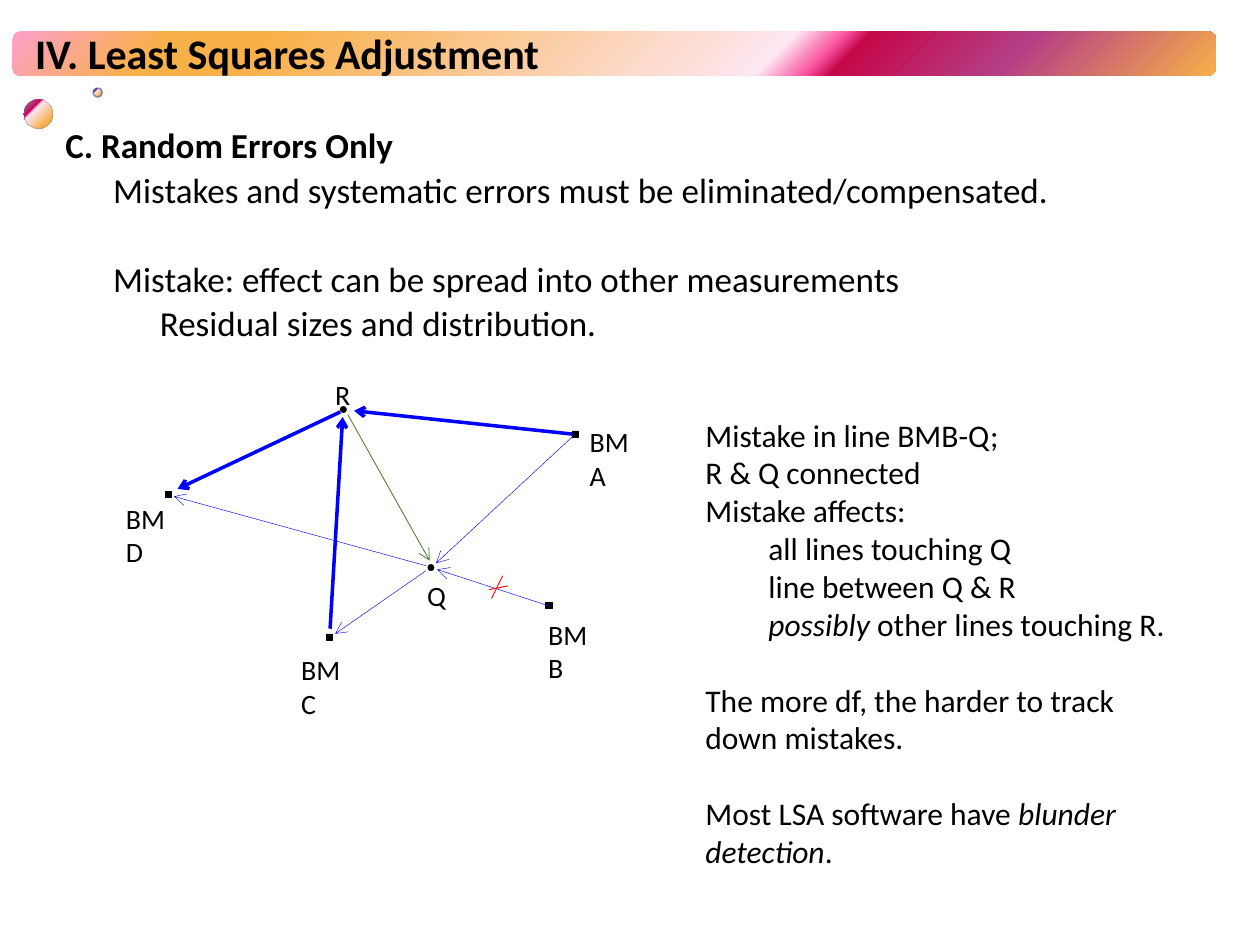
"""Build the least squares slide on random errors with its levelling network."""
from dataclasses import dataclass
from typing import Optional

from lxml.etree import SubElement
from pptx import Presentation
from pptx.dml.color import RGBColor
from pptx.enum.shapes import MSO_CONNECTOR as Conn, MSO_SHAPE as Shp
from pptx.oxml import parse_xml
from pptx.oxml.ns import nsdecls, qn
from pptx.util import Emu, Inches, Pt

COLS, ROWS = 100, 75
CELL = Inches(0.1)
FONT = "Calibri"
BLACK = RGBColor(0x00, 0x00, 0x00)
BLUE = RGBColor(0x00, 0x00, 0xFF)
RED = RGBColor(0xFF, 0x00, 0x00)
GREEN = RGBColor(0x54, 0x82, 0x35)
RIM = RGBColor(0x3B, 0x6B, 0xC1)
STOPS = [
    (0, RGBColor(0xFC, 0x9F, 0xCB)), (13, RGBColor(0xF8, 0xB0, 0x49)),
    (21, RGBColor(0xF8, 0xB0, 0x49)), (63, RGBColor(0xFE, 0xE7, 0xF2)),
    (67, RGBColor(0xF9, 0x52, 0xA0)), (69, RGBColor(0xC5, 0x08, 0x49)),
    (82, RGBColor(0xB4, 0x3E, 0x85)), (100, RGBColor(0xF8, 0xB0, 0x49)),
]
LINEAR = '<a:lin ang="2700000" scaled="0"/>'
RADIAL = '<a:path path="circle"><a:fillToRect l="100000" t="100000"/></a:path>'
MARK = 0.5


@dataclass(frozen=True)
class Box:
    """A rectangle in grid columns and rows."""
    col: float
    row: float
    cols: float
    rows: float


@dataclass(frozen=True)
class Ornament:
    """A gradient shape of the slide's frame."""
    kind: Shp
    box: Box
    shade: str
    rim: Optional[float] = None


@dataclass(frozen=True)
class Station:
    """A network point and its label."""
    name: str
    kind: Shp
    col: float
    row: float
    label: Box


@dataclass(frozen=True)
class Sight:
    """A line of the network, with its arrow at the end."""
    start: tuple[float, float]
    end: tuple[float, float]
    color: RGBColor = BLUE
    weight: float = 0.25
    arrow: bool = True
    origin: Optional[str] = None


@dataclass(frozen=True)
class Para:
    """A paragraph of (text, italic) runs."""
    runs: tuple[tuple[str, bool], ...]
    indent: float = 0
    before: float = 0
    bold: bool = False


def line(text: str, **style) -> Para:
    """Return a paragraph of one upright run."""
    return Para(((text, False),), **style)


ORNAMENTS = [
    Ornament(Shp.ROUNDED_RECTANGLE, Box(1, 2.5, 95.5, 3.5), LINEAR),
    Ornament(Shp.OVAL, Box(1.9, 7.9, 2.3, 2.3), RADIAL, 0.16),
    Ornament(Shp.OVAL, Box(7.4, 7, 0.7, 0.7), RADIAL, 1),
]
STATIONS = [
    Station("BMA", Shp.RECTANGLE, 45.4, 34.2, Box(46.8, 33.7, 3.9, 2.4)),
    Station("BMB", Shp.RECTANGLE, 43.3, 47.8, Box(43.5, 49, 3.9, 2.4)),
    Station("BMC", Shp.RECTANGLE, 25.9, 50.3, Box(23.9, 51.8, 3.9, 2.4)),
    Station("BMD", Shp.RECTANGLE, 13.1, 39, Box(10, 39.8, 4, 2.4)),
    Station("Q", Shp.OVAL, 33.95, 44.8, Box(33.9, 45.9, 1.3, 2.4)),
    Station("R", Shp.OVAL, 27, 32.25, Box(26.6, 30, 1.1, 2.4)),
]
SIGHTS = [
    Sight((33.8, 44.9), (13.8, 39.4)),
    Sight((45.6, 34.5), (34.6, 44.7)),
    Sight((43.6, 48.1), (34.7, 45.2)),
    Sight((33.8, 45.3), (26.6, 50.3)),
    Sight((27, 32.7), (14.1, 38.8), weight=0),
    Sight((26.2, 49.9), (27.2, 33.1), weight=0),
    Sight((45.4, 34.5), (28.1, 32.6), weight=0, origin="BMA"),
    Sight((39.9, 45.7), (39, 47.5), RED, 0.5, arrow=False),
    Sight((38.8, 46.8), (40.3, 46.5), RED, 0.5, arrow=False),
    Sight((27.6, 32.9), (34.1, 44.5), GREEN, 0.5),
]
TITLE = [line("IV. Least Squares Adjustment", bold=True)]
BODY = [
    line("C. Random Errors Only", bold=True),
    line("Mistakes and systematic errors must be eliminated/compensated.",
         indent=3.8, before=3.8),
    line("Mistake: effect can be spread into other measurements",
         indent=3.8, before=29.4),
    line("Residual sizes and distribution.", indent=7.5, before=3.8),
]
EFFECTS = [
    line("Mistake in line BMB-Q;"),
    line("R & Q connected"),
    line("Mistake affects:"),
    line("all lines touching Q", indent=5),
    line("line between Q & R", indent=5),
    Para((("possibly", True), (" other lines touching R.", False)), indent=5),
    line("The more df, the harder to track down mistakes.", before=21.8),
    Para((("Most LSA software have ", False), ("blunder detection", True),
          (".", False)), before=21.8),
]


def grid(n: float) -> Emu:
    """Convert grid units to a length."""
    return Emu(round(n * CELL))


def place(box: Box) -> tuple[Emu, ...]:
    """Return left, top, width and height of a box."""
    return tuple(map(grid, (box.col, box.row, box.cols, box.rows)))


def add_text(slide, box: Box, paras: list[Para], size: float,
             spacing: float = 1, inset: bool = True):
    """Add a wrapped text box."""
    tf = slide.shapes.add_textbox(*place(box)).text_frame
    tf.word_wrap = True
    if not inset:
        tf.margin_left = tf.margin_right = tf.margin_top = tf.margin_bottom = 0
    for i, para in enumerate(paras):
        p = tf.paragraphs[0] if i == 0 else tf.add_paragraph()
        p.font.name, p.font.size, p.font.bold = FONT, Pt(size), para.bold
        p.font.color.rgb = BLACK
        p.line_spacing, p.space_before = spacing, Pt(para.before)
        if para.indent:
            p._p.get_or_add_pPr().set("marL", str(grid(para.indent)))
        for text, italic in para.runs:
            r = p.add_run()
            r.text = text
            if italic:
                r.font.italic = True


def add_ornament(slide, item: Ornament):
    """Add a shape with the rainbow gradient."""
    s = slide.shapes.add_shape(item.kind, *place(item.box))
    s.shadow.inherit = False
    stops = "".join(f'<a:gs pos="{pos * 1000}"><a:srgbClr val="{color}"/></a:gs>'
                    for pos, color in STOPS)
    s._element.spPr.find(qn("a:prstGeom")).addnext(parse_xml(
        f'<a:gradFill {nsdecls("a")} rotWithShape="1"><a:gsLst>{stops}</a:gsLst>'
        f'{item.shade}</a:gradFill>'))
    if item.rim is None:
        s.line.fill.background()
        return
    s.line.width, s.line.color.rgb = Pt(item.rim), RIM
    clr = s.line._ln.find(".//" + qn("a:srgbClr"))
    SubElement(clr, qn("a:alpha")).set("val", "60000")


def add_station(slide, item: Station):
    """Add a point with its label and return the point."""
    s = slide.shapes.add_shape(item.kind, *place(Box(item.col, item.row, MARK, MARK)))
    s.shadow.inherit = False
    s.fill.solid()
    s.fill.fore_color.rgb = s.line.color.rgb = BLACK
    s.line.width = Pt(0.25)
    add_text(slide, item.label, [line(item.name)], 16, inset=False)
    return s


def add_sight(slide, item: Sight, points: dict):
    """Add a line, joined to its origin where one is named."""
    s = slide.shapes.add_connector(Conn.STRAIGHT, *map(grid, item.start + item.end))
    if item.origin:
        s.begin_connect(points[item.origin], 1)
    s.line.color.rgb, s.line.width = item.color, Pt(item.weight)
    if item.arrow:
        SubElement(s.line._ln, qn("a:tailEnd")).set("type", "arrow")
    SubElement(s._element.spPr, qn("a:effectLst"))


def main():
    """Build and save the slide."""
    prs = Presentation()
    prs.slide_width, prs.slide_height = grid(COLS), grid(ROWS)
    slide = prs.slides.add_slide(prs.slide_layouts[6])
    for item in ORNAMENTS:
        add_ornament(slide, item)
    add_text(slide, Box(1.8, 1.7, 72.9, 5), TITLE, 24)
    add_text(slide, Box(4.2, 9.7, 92.2, 58.6), BODY, 20, spacing=0.9)
    points = {item.name: add_station(slide, item) for item in STATIONS}
    for item in SIGHTS:
        add_sight(slide, item, points)
    add_text(slide, Box(55, 32.5, 40.2, 37.4), EFFECTS, 18)
    prs.save("out.pptx")


if __name__ == "__main__":
    main()
